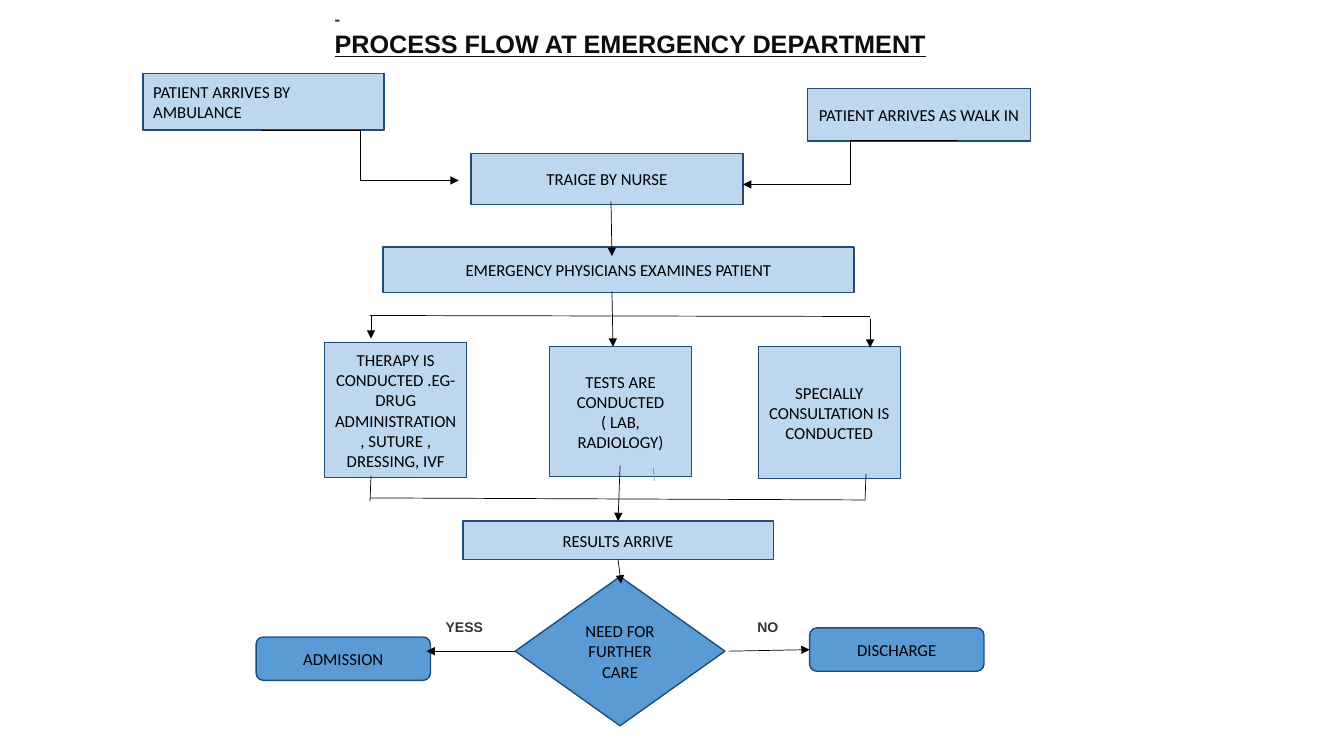
from pptx import Presentation
from pptx.dml.color import RGBColor
from pptx.enum.shapes import MSO_CONNECTOR as Connector, MSO_SHAPE as Shape
from pptx.enum.text import MSO_ANCHOR as Anchor, PP_ALIGN as Align
from pptx.oxml.ns import qn
from pptx.util import Pt
from lxml.etree import SubElement

EMU_PER_PX = 9144
COLORS = {
    "step": "BDD7EE",
    "outcome": "5B9BD5",
    "border": "1F4D78",
    "arrow": "000000",
    "text": "000000",
    "label": "333333",
    "title": "0D0D0D",
}


def px(*lengths):
    return [length * EMU_PER_PX for length in lengths]


def color(name):
    return RGBColor.from_string(COLORS[name])


class FlowSlide:
    def __init__(self, presentation):
        self.slide = presentation.slides.add_slide(presentation.slide_layouts[6])

    def run(self, paragraph, text, size, font, ink, bold=False, underline=False):
        run = paragraph.add_run()
        run.text = text
        run.font.size = Pt(size)
        run.font.name = font
        run.font.bold = bold
        run.font.underline = underline
        run.font.color.rgb = color(ink)

    def box(self, text, bounds, kind=Shape.RECTANGLE, fill="step", align=Align.CENTER):
        shape = self.slide.shapes.add_shape(kind, *px(*bounds))
        shape.shadow.inherit = False
        shape.fill.solid()
        shape.fill.fore_color.rgb = color(fill)
        shape.line.color.rgb = color("border")
        shape.line.width = Pt(1)
        frame = shape.text_frame
        frame.word_wrap = True
        frame.vertical_anchor = Anchor.MIDDLE
        paragraph = frame.paragraphs[0]
        paragraph.alignment = align
        self.run(paragraph, text, 12, "Calibri", "text")
        return shape

    def line(self, start, end, arrow=False, kind=Connector.STRAIGHT, ink="arrow",
             begin=None, finish=None):
        connector = self.slide.shapes.add_connector(kind, *px(*start, *end))
        connector.line.color.rgb = color(ink)
        connector.line.width = Pt(0.5)
        if arrow:
            SubElement(connector.line._get_or_add_ln(), qn("a:tailEnd"), type="triangle")
        SubElement(connector._element.spPr, qn("a:effectLst"))
        if begin:
            connector.begin_connect(*begin)
        if finish:
            connector.end_connect(*finish)

    def text_box(self, bounds):
        frame = self.slide.shapes.add_textbox(*px(*bounds)).text_frame
        frame.word_wrap = True
        frame.vertical_anchor = Anchor.MIDDLE
        return frame

    def title(self, lead, text, bounds):
        frame = self.text_box(bounds)
        self.run(frame.paragraphs[0], lead, 12, "Arial", "label", bold=True)
        self.run(frame.add_paragraph(), text, 18, "Arial", "title", bold=True, underline=True)

    def label(self, text, bounds):
        paragraph = self.text_box(bounds).paragraphs[0]
        paragraph.alignment = Align.CENTER
        self.run(paragraph, text, 10, "Arial", "label", bold=True)


def main():
    presentation = Presentation()
    presentation.slide_width, presentation.slide_height = px(1333, 750)
    flow = FlowSlide(presentation)

    flow.box("PATIENT ARRIVES BY AMBULANCE", (142, 73, 239, 56), align=Align.LEFT)
    flow.box("PATIENT ARRIVES AS WALK IN", (801, 88, 221, 52))
    flow.box("TRAIGE BY NURSE", (467, 152, 270, 51))
    flow.box("EMERGENCY PHYSICIANS EXAMINES PATIENT", (380, 245, 467, 45))
    flow.box("THERAPY IS CONDUCTED .EG- DRUG ADMINISTRATION, SUTURE , DRESSING, IVF",
             (322, 340, 141, 134))
    flow.box("TESTS ARE CONDUCTED ( LAB, RADIOLOGY)", (545, 344, 141, 129))
    flow.box("SPECIALLY CONSULTATION IS CONDUCTED", (752, 344, 141, 131))
    results = flow.box("RESULTS ARRIVE", (459, 517, 308, 38))
    decision = flow.box("NEED FOR FURTHER CARE", (511, 572, 208, 148),
                        Shape.FLOWCHART_DECISION, "outcome")
    flow.box("ADMISSION", (254, 632, 173, 43), Shape.ROUNDED_RECTANGLE, "outcome")
    discharge = flow.box("DISCHARGE", (803, 623, 173, 43),
                         Shape.ROUNDED_RECTANGLE, "outcome")

    flow.line((259, 129), (455, 179), arrow=True, kind=Connector.ELBOW)
    flow.line((949, 139), (737, 183), arrow=True, kind=Connector.ELBOW)

    for start, end in [
        ((367, 313), (863, 314)),
        ((367, 494), (859, 496)),
        ((368, 472), (367, 497)),
        ((859, 470), (858, 495)),
    ]:
        flow.line(start, end)
    flow.line((648, 464), (649, 477), ink="outcome")

    for start, end in [
        ((606, 200), (607, 254)),
        ((607, 289), (608, 344)),
        ((368, 314), (368, 336)),
        ((863, 316), (863, 345)),
    ]:
        flow.line(start, end, arrow=True)
    flow.line((615, 462), (616, 516), arrow=True, finish=(results, 0))
    flow.line((613, 555), (616, 579), arrow=True, begin=(results, 2))
    flow.line((511, 646), (423, 646), arrow=True, begin=(decision, 1))
    flow.line((723, 646), (801, 646), arrow=True, finish=(discharge, 1))

    flow.title("-", "PROCESS FLOW AT EMERGENCY DEPARTMENT", (322, 3, 1011, 61))
    flow.label("YESS", (420, 607, 81, 30))
    flow.label("NO", (721, 607, 81, 30))

    presentation.save("out.pptx")


if __name__ == "__main__":
    main()
